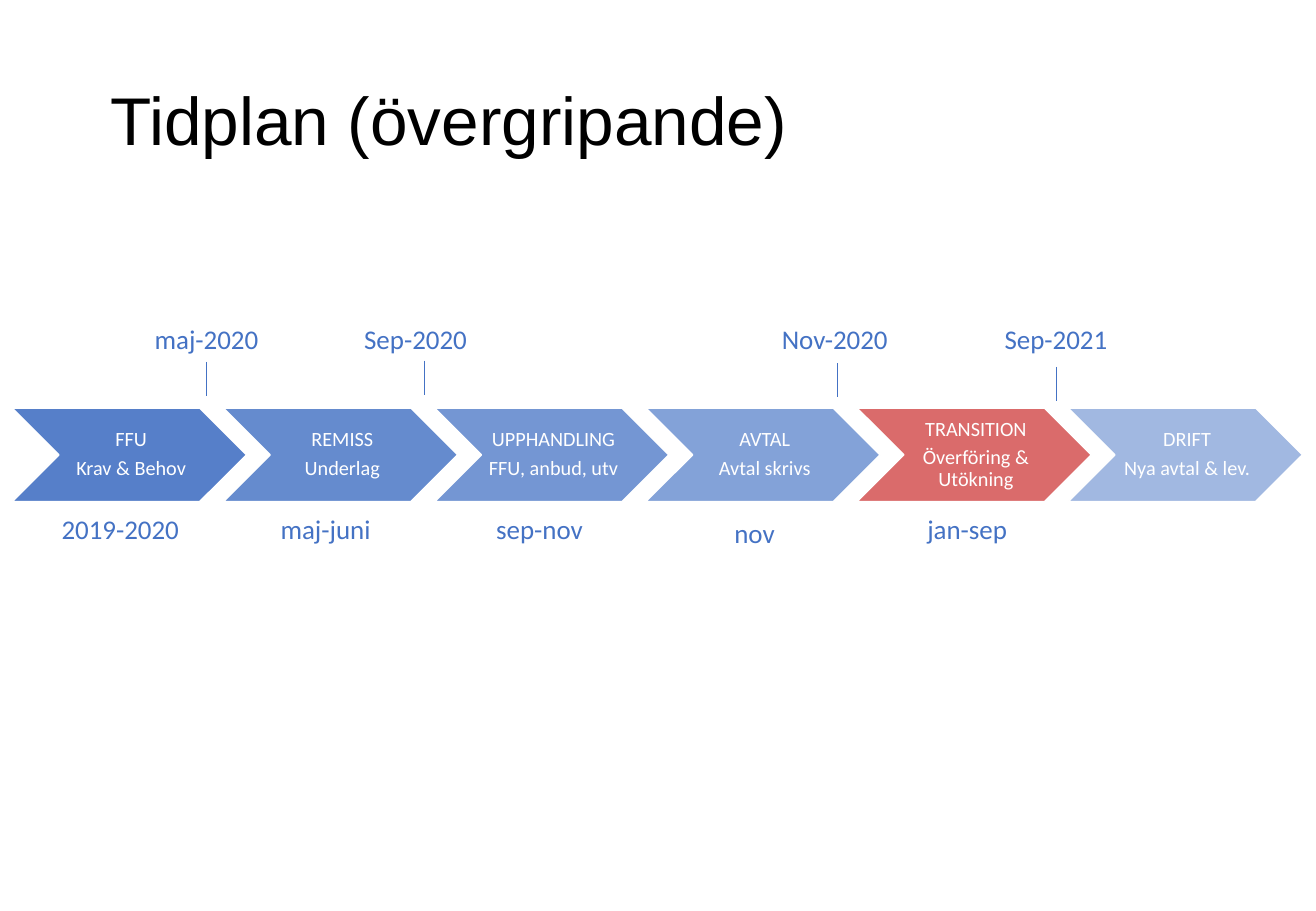
from lxml import etree
from pptx import Presentation
from pptx.dml.color import RGBColor
from pptx.enum.shapes import MSO_CONNECTOR, MSO_SHAPE
from pptx.enum.text import MSO_ANCHOR as Anchor, PP_ALIGN as Align
from pptx.oxml.ns import qn
from pptx.util import Inches, Pt

BLACK = RGBColor(0x00, 0x00, 0x00)
WHITE = RGBColor(0xFF, 0xFF, 0xFF)
BLUE = RGBColor(0x44, 0x72, 0xC4)
RED = RGBColor(0xC0, 0x00, 0x00)

prs = Presentation()
prs.slide_width, prs.slide_height = Inches(10.83), Inches(7.5)
slide = prs.slides.add_slide(prs.slide_layouts[6])


def add_text(lines, left, top, width, height, size=16, font="Calibri", color=BLUE,
             align=Align.CENTER, anchor=Anchor.TOP, insets=(0.1, 0.05, 0.1, 0.05),
             wrap=True, line_spacing=1.0, space_after=0):
    """Place a text box, lengths in inches, with one paragraph per line."""
    box = slide.shapes.add_textbox(*map(Inches, (left, top, width, height)))
    frame = box.text_frame
    frame.word_wrap = wrap
    frame.vertical_anchor = anchor
    (frame.margin_left, frame.margin_top,
     frame.margin_right, frame.margin_bottom) = map(Inches, insets)
    frame.text = "\n".join(lines)
    for paragraph in frame.paragraphs:
        paragraph.alignment = align
        paragraph.line_spacing = line_spacing
        paragraph.space_after = Pt(space_after)
        for run in paragraph.runs:
            run.font.size = Pt(size)
            run.font.name = font
            run.font.color.rgb = color


add_text(["Tidplan (övergripande)"], 0.81, 0.67, 9.21, 1.25, size=40, font="Arial",
         color=BLACK, align=Align.LEFT, line_spacing=0.9)

# Phases: heading, description, fill
phases = [
    ("FFU", "Krav & Behov", BLUE),
    ("REMISS", "Underlag", BLUE),
    ("UPPHANDLING", "FFU, anbud, utv", BLUE),
    ("AVTAL", "Avtal skrivs", BLUE),
    ("TRANSITION", "Överföring & Utökning", RED),
    ("DRIFT", "Nya avtal & lev.", BLUE),
]
ROW_LEFT, ROW_TOP, PITCH = 0.1, 3.36, 1.738
PHASE_W, PHASE_H = 1.93, 0.77
for column, (heading, description, fill) in enumerate(phases):
    left = ROW_LEFT + column * PITCH
    chevron = slide.shapes.add_shape(
        MSO_SHAPE.CHEVRON, *map(Inches, (left, ROW_TOP, PHASE_W, PHASE_H)))
    chevron.shadow.inherit = False
    chevron.fill.solid()
    chevron.fill.fore_color.rgb = fill
    opacity = 90 - 8 * column
    tint = chevron.fill._xPr.find(qn("a:solidFill"))[0]
    etree.SubElement(tint, qn("a:alpha")).set("val", str(opacity * 1000))
    chevron.line.color.rgb = WHITE
    chevron.line.width = Pt(1)
    add_text([heading, description], left + PHASE_H / 2, ROW_TOP, PHASE_W - PHASE_H, PHASE_H,
             size=12, color=WHITE, anchor=Anchor.MIDDLE, insets=(0.05, 0.02, 0.02, 0.02),
             line_spacing=0.9, space_after=4.2)

# Dates: text, centre, top
LABEL_W, LABEL_H = 1.2, 0.37
MILESTONE_TOP, PERIOD_TOP = 2.61, 4.17
dates = [
    ("maj-2020", 1.7, MILESTONE_TOP),
    ("Sep-2020", 3.42, MILESTONE_TOP),
    ("Nov-2020", 6.87, MILESTONE_TOP),
    ("Sep-2021", 8.69, MILESTONE_TOP),
    ("2019-2020", 0.99, PERIOD_TOP),
    ("maj-juni", 2.68, PERIOD_TOP),
    ("sep-nov", 4.44, PERIOD_TOP),
    ("nov", 6.21, PERIOD_TOP + 0.03),
    ("jan-sep", 7.96, PERIOD_TOP),
]
for date, centre, top in dates:
    add_text([date], centre - LABEL_W / 2, top, LABEL_W, LABEL_H, wrap=False)

TICK_H = 0.28
for x, top in [(1.7, 2.98), (3.49, 2.97), (6.89, 2.99), (8.69, 3.02)]:
    tick = slide.shapes.add_connector(
        MSO_CONNECTOR.STRAIGHT, *map(Inches, (x, top, x, top + TICK_H)))
    tick.line.color.rgb = BLUE
    tick.line.width = Pt(0.5)
    etree.SubElement(tick._element.spPr, qn("a:effectLst"))

prs.save("out.pptx")
